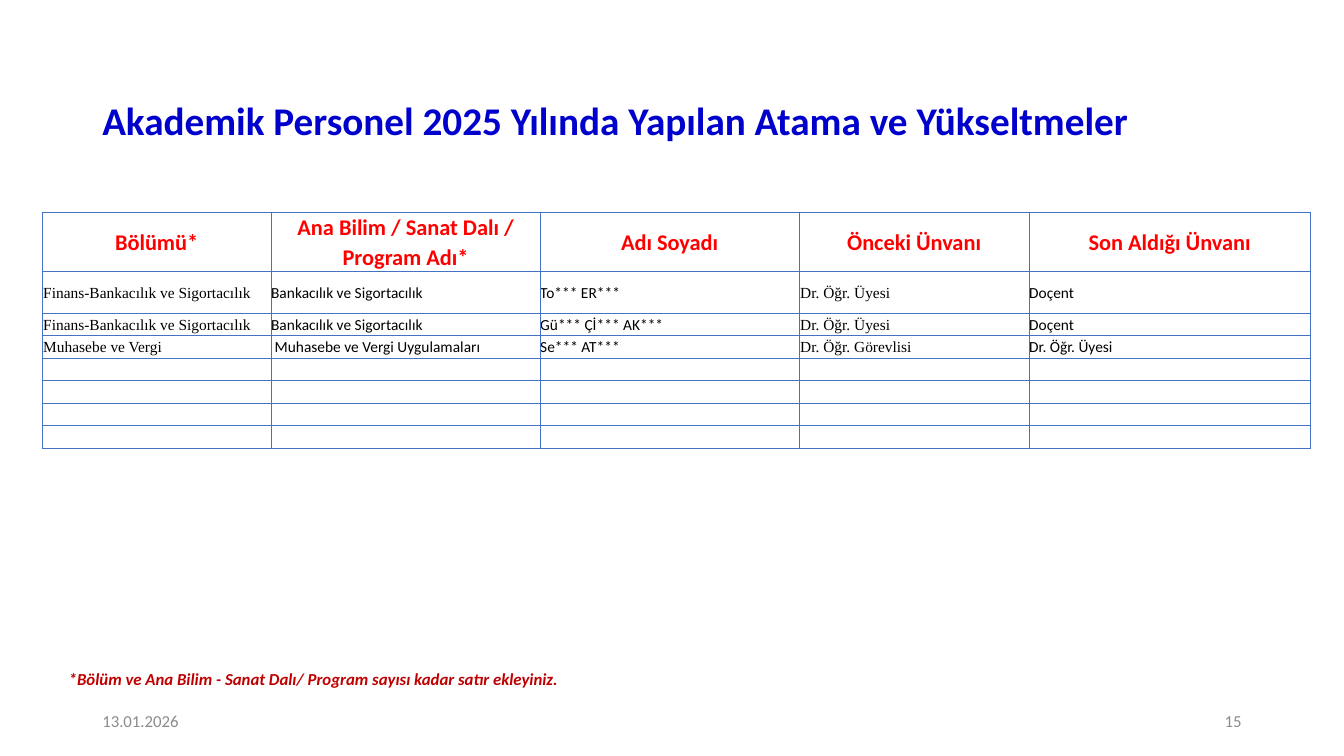
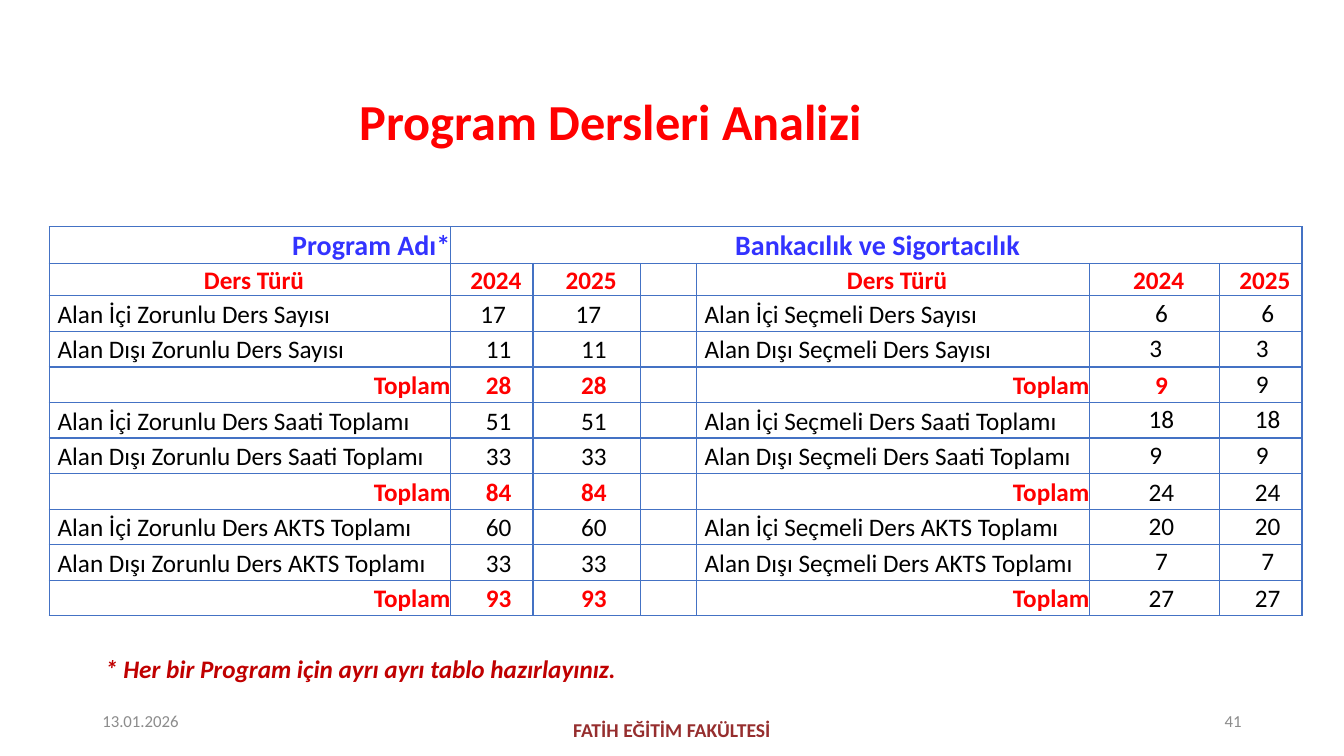
from lxml import etree
from pptx import Presentation
from pptx.dml.color import RGBColor
from pptx.enum import text
from pptx.oxml import ns
from pptx.util import Pt


class Theme:
    font = "Calibri"
    serif = "Times New Roman"
    black = "000000"
    blue = "0000CC"
    sky = "3333FF"
    red = "FF0000"
    note = "C00000"
    wine = "962E2E"
    gray = "8C8C8C"
    rule = "4472C4"
    big = 36
    title = 28
    head = 20
    body = 18
    label = 16
    foot = 14
    small = 12
    tiny = 11


LEFT, MID, RIGHT = text.PP_ALIGN.LEFT, text.PP_ALIGN.CENTER, text.PP_ALIGN.RIGHT
TOP, CENTER = text.MSO_ANCHOR.TOP, text.MSO_ANCHOR.MIDDLE


def write(frame, words, size, color, bold=False, italic=False, align=LEFT,
          font=Theme.font, space=1.0):
    frame.text = words
    line = frame.paragraphs[0]
    line.alignment = align
    line.line_spacing = space
    for run in line.runs:
        run.font.name = font
        run.font.size = Pt(size)
        run.font.bold = bold
        run.font.italic = italic
        run.font.color.rgb = RGBColor.from_string(color)


def grid(slide, left, top, cols, rows, size):
    frame = slide.shapes.add_table(len(rows), len(cols), Pt(left), Pt(top),
                                   Pt(sum(cols)), Pt(sum(rows)))
    table = frame.table
    table.first_row = table.horz_banding = False
    for col, width in zip(table.columns, cols):
        col.width = Pt(width)
    for row, height in zip(table.rows, rows):
        row.height = Pt(height)
    for cell in table.iter_cells():
        cell.margin_left = cell.margin_right = 0
        cell.margin_top = cell.margin_bottom = 0
        cell.vertical_anchor = CENTER
        cell.fill.background()
        para = cell.text_frame.paragraphs[0]._p
        end = etree.SubElement(para, ns.qn("a:endParaRPr"))
        end.set("sz", str(size * 100))
        props = cell._tc.get_or_add_tcPr()
        for spot, side in enumerate(("lnL", "lnR", "lnT", "lnB")):
            edge = etree.Element(ns.qn("a:" + side), w=str(Pt(1)))
            fill = etree.SubElement(edge, ns.qn("a:solidFill"))
            etree.SubElement(fill, ns.qn("a:srgbClr"), val=Theme.rule)
            props.insert(spot, edge)
    return table


deck = Presentation()
deck.slide_width, deck.slide_height = Pt(960), Pt(540)

heads = [
    ("Akademik Personel 2025 Yılında Yapılan Atama ve Yükseltmeler",
     Theme.title, Theme.blue, (26, 62.5, 826.5, 50)),
    ("Program Dersleri Analizi", Theme.big, Theme.red, (29.5, 59, 813.5, 60)),
]
notes = [
    [((66, 500.5, 216, 28.75), "13.01.2026", Theme.small, Theme.gray, False, False, LEFT, CENTER),
     ((678, 500.5, 216, 28.75), "15", Theme.small, Theme.gray, False, False, RIGHT, CENTER),
     ((42, 474, 610, 22), "*Bölüm ve Ana Bilim - Sanat Dalı/ Program sayısı kadar satır ekleyiniz.",
      Theme.small, Theme.note, True, True, LEFT, TOP)],
    [((66, 500.5, 216, 28.75), "13.01.2026", Theme.small, Theme.gray, False, False, LEFT, CENTER),
     ((678, 500.5, 216, 28.75), "41", Theme.small, Theme.gray, False, False, RIGHT, CENTER),
     ((68, 463, 551, 29), "* Her bir Program için ayrı ayrı tablo hazırlayınız.",
      Theme.body, Theme.note, True, True, LEFT, TOP),
     ((318, 507, 324, 28.75), "FATİH EĞİTİM FAKÜLTESİ",
      Theme.foot, Theme.wine, True, False, MID, CENTER)],
]
slides = []
for (words, size, color, box), items in zip(heads, notes):
    slide = deck.slides.add_slide(deck.slide_layouts[5])
    slides.append(slide)
    title = slide.shapes.title
    title.left, title.top, title.width, title.height = map(Pt, box)
    title.text_frame.vertical_anchor = CENTER
    write(title.text_frame, words, size, color, True, align=MID, space=0.9)
    for box, words, size, color, bold, italic, align, anchor in items:
        frame = slide.shapes.add_textbox(*map(Pt, box)).text_frame
        frame.word_wrap = True
        frame.vertical_anchor = anchor
        write(frame, words, size, color, bold, italic, align)

staff = [
    ["Bölümü*", "Ana Bilim / Sanat Dalı / Program Adı*", "Adı Soyadı",
     "Önceki Ünvanı", "Son Aldığı Ünvanı"],
    ["Finans-Bankacılık ve Sigortacılık", "Bankacılık ve Sigortacılık",
     "To*** ER***", "Dr. Öğr. Üyesi", "Doçent"],
    ["Finans-Bankacılık ve Sigortacılık", "Bankacılık ve Sigortacılık",
     "Gü*** Çİ*** AK***", "Dr. Öğr. Üyesi", "Doçent"],
    ["Muhasebe ve Vergi", "Muhasebe ve Vergi Uygulamaları",
     "Se*** AT***", "Dr. Öğr. Görevlisi", "Dr. Öğr. Üyesi"],
]
table = grid(slides[0], 30.2, 151.8, [163.5, 192.2, 185, 164.3, 200.8],
             [42, 30] + [16.1] * 6, Theme.tiny)
for r, row in enumerate(staff):
    for c, words in enumerate(row):
        cell = table.cell(r, c)
        if r == 0:
            write(cell.text_frame, words, Theme.label, Theme.red, True, align=MID, space=1.07)
        else:
            font = Theme.serif if c in (0, 3) else Theme.font
            write(cell.text_frame, words, Theme.tiny, Theme.black, font=font, space=1.07)
        if c in (0, 3):
            cell.margin_left = cell.margin_right = Pt(0.7)
table.cell(3, 1).margin_left = Pt(2.5)

hours = [
    ["Program Adı*", "Bankacılık ve Sigortacılık", "", "", "", "", ""],
    ["Ders Türü", "2024", "2025", "", "Ders Türü", "2024", "2025"],
    ["Alan İçi Zorunlu Ders Sayısı", "17", "17", "", "Alan İçi Seçmeli Ders Sayısı", "6", "6"],
    ["Alan Dışı Zorunlu Ders Sayısı", "11", "11", "", "Alan Dışı Seçmeli Ders Sayısı", "3", "3"],
    ["Toplam", "28", "28", "", "Toplam", "9", "9"],
    ["Alan İçi Zorunlu Ders Saati Toplamı", "51", "51", "",
     "Alan İçi Seçmeli Ders Saati Toplamı", "18", "18"],
    ["Alan Dışı Zorunlu Ders Saati Toplamı", "33", "33", "",
     "Alan Dışı Seçmeli Ders Saati Toplamı", "9", "9"],
    ["Toplam", "84", "84", "", "Toplam", "24", "24"],
    ["Alan İçi Zorunlu Ders AKTS Toplamı", "60", "60", "",
     "Alan İçi Seçmeli Ders AKTS Toplamı", "20", "20"],
    ["Alan Dışı Zorunlu Ders AKTS Toplamı", "33", "33", "",
     "Alan Dışı Seçmeli Ders AKTS Toplamı", "7", "7"],
    ["Toplam", "93", "93", "", "Toplam", "27", "27"],
]
near = {(0, 1), (2, 1), (2, 2), (3, 5), (3, 6), (4, 6), (6, 5), (6, 6)}
table = grid(slides[1], 35.2, 162, [286.5, 59, 77.1, 39.6, 280.8, 92.9, 59],
             [26.2, 23] + [25.4] * 9, Theme.body)
table.cell(0, 1).merge(table.cell(0, 6))
for r, row in enumerate(hours):
    for c, words in enumerate(row):
        if not words:
            continue
        cell = table.cell(r, c)
        name = c in (0, 4)
        total = row[0] == "Toplam"
        strong = r < 2 or total and (c < 5 or (r, c) == (4, 5))
        color = Theme.sky if r == 0 else Theme.red if strong else Theme.black
        if name and r != 1:
            align = RIGHT if total or r == 0 else LEFT
        else:
            align = MID
        write(cell.text_frame, words, Theme.head if r == 0 else Theme.body,
              color, strong, align=align, space=1.07)
        if (r, c) in near:
            cell.margin_left = Pt(2)
        else:
            cell.margin_left = Pt(6 if name or r < 2 else 10)
        if r > 1 and c > 4 and (not total or (r, c) == (4, 6)):
            cell.vertical_anchor = TOP

deck.save("out.pptx")
